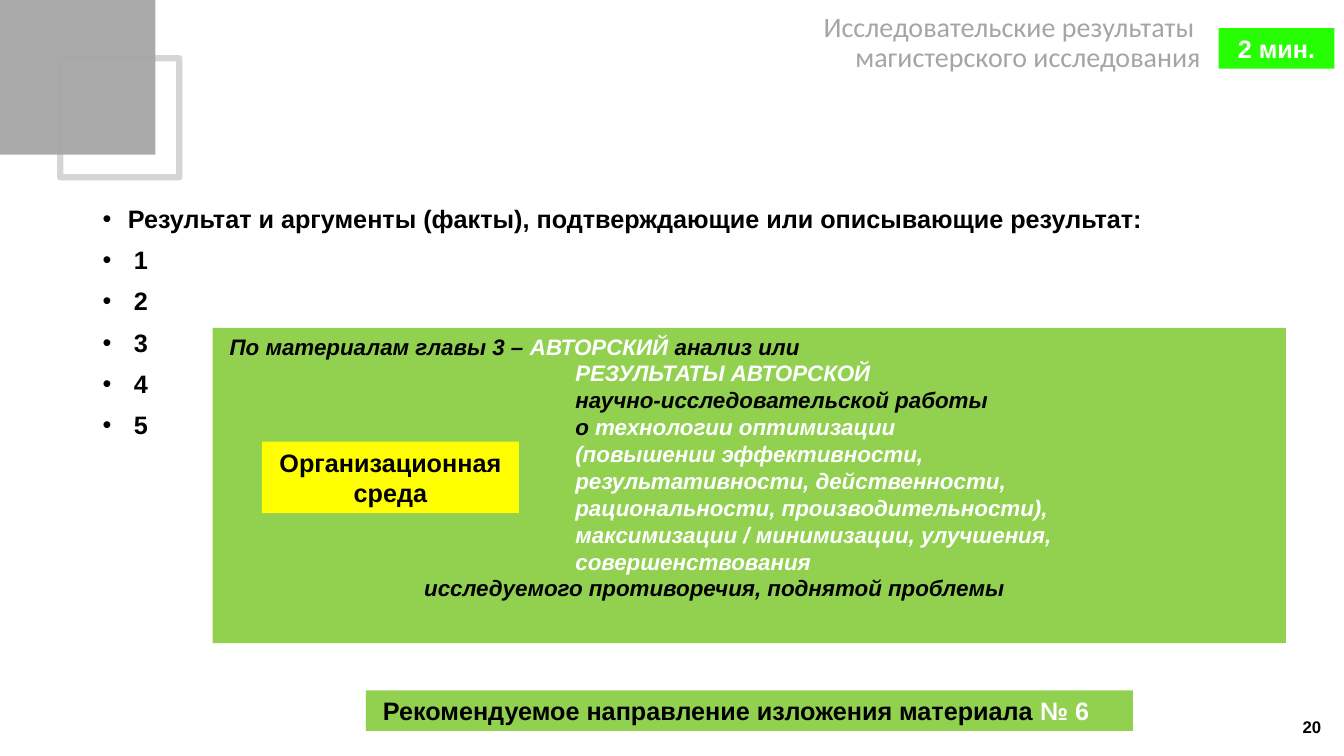
from dataclasses import dataclass, field

from lxml import etree
from pptx import Presentation
from pptx import util as u
from pptx.dml import color, fill
from pptx.enum import shapes, text
from pptx.oxml import ns
from pptx.shapes.base import BaseShape
from pptx.slide import Slide

BLACK, WHITE, GREEN = "000000", "FFFFFF", "92D050"
LEFT, CENTER, RIGHT = text.PP_ALIGN.LEFT, text.PP_ALIGN.CENTER, text.PP_ALIGN.RIGHT
TOP, MIDDLE = text.MSO_ANCHOR.TOP, text.MSO_ANCHOR.MIDDLE
STRONG = {"name": "Arial", "size": u.Pt(18), "bold": True}
ITALIC = {**STRONG, "size": u.Pt(16), "italic": True}
HEADING = {"name": "Calibri", "size": u.Pt(20), "bold": False}
NUMBER = {**STRONG, "size": u.Pt(12)}


@dataclass
class Run:
    words: str
    colour: str = BLACK


@dataclass
class Line:
    runs: list[Run]
    left: float = 0
    hanging: float = 0
    bullet: str = ""
    spacing: dict = field(default_factory=dict)


@dataclass
class Box:
    left: float
    top: float
    width: float
    height: float
    lines: list[Line] = field(default_factory=list)
    colour: str = ""
    align: text.PP_ALIGN = LEFT
    anchor: text.MSO_ANCHOR = MIDDLE
    font: dict = field(default_factory=lambda: STRONG)
    inset: bool = True


def set_all(target: object, values: dict) -> None:
    for name, value in values.items():
        setattr(target, name, value)


def paint(area: fill.FillFormat, colour: str, opacity: int = 100) -> None:
    area.solid()
    area.fore_color.rgb = color.RGBColor.from_string(colour)
    if opacity < 100:
        tint = area.fore_color._xFill.find(ns.qn("a:srgbClr"))
        etree.SubElement(tint, ns.qn("a:alpha"), val=str(opacity * 1000))


def place(shape: BaseShape, box: Box) -> None:
    set_all(shape, {
        "left": u.Cm(box.left), "top": u.Cm(box.top),
        "width": u.Cm(box.width), "height": u.Cm(box.height),
    })


def write(shape: BaseShape, box: Box) -> None:
    frame = shape.text_frame
    set_all(frame, {
        "word_wrap": True,
        "auto_size": text.MSO_AUTO_SIZE.NONE,
        "vertical_anchor": box.anchor,
    })
    if not box.inset:
        set_all(frame, dict.fromkeys(
            ("margin_left", "margin_top", "margin_right", "margin_bottom"), 0))
    for index, line in enumerate(box.lines):
        paragraph = frame.add_paragraph() if index else frame.paragraphs[0]
        set_all(paragraph, {"alignment": box.align, "space_before": u.Pt(0), **line.spacing})
        properties = paragraph._p.get_or_add_pPr()
        properties.set("marL", str(u.Cm(line.left)))
        properties.set("indent", str(-u.Cm(line.hanging)))
        if line.bullet:
            etree.SubElement(properties, ns.qn("a:buFont"), typeface="Arial")
            etree.SubElement(properties, ns.qn("a:buChar"), char=line.bullet)
        for part in line.runs:
            run = paragraph.add_run()
            run.text = part.words
            set_all(run.font, box.font)
            paint(run.font.fill, part.colour)


def add_block(slide: Slide, box: Box, opacity: int = 100) -> BaseShape:
    block = slide.shapes.add_shape(shapes.MSO_SHAPE.RECTANGLE, 0, 0, 0, 0)
    place(block, box)
    block.shadow.inherit = False
    block.line.fill.background()
    if box.colour:
        paint(block.fill, box.colour, opacity)
    else:
        block.fill.background()
    if box.lines:
        write(block, box)
    return block


def fill_placeholder(shape: BaseShape, box: Box) -> None:
    place(shape, box)
    write(shape, box)


def result_lines() -> list[Line]:
    tight = {"line_spacing": 0.9}
    heading = "Результат и аргументы (факты), подтверждающие или описывающие результат:"
    lines = [Line([Run(heading)], 0.64, 0.64, "•", tight)]
    for number in range(1, 6):
        lines.append(Line([Run(str(number))], 0.79, 0.79, "•",
                          {**tight, "space_before": u.Pt(10)}))
    return lines


def author_lines() -> list[Line]:
    column = [
        [Run("РЕЗУЛЬТАТЫ АВТОРСКОЙ", WHITE)],
        [Run("научно-исследовательской работы")],
        [Run("о "), Run("технологии оптимизации", WHITE)],
        [Run("(повышении эффективности,", WHITE)],
        [Run("результативности, действенности,", WHITE)],
        [Run("рациональности, производительности),", WHITE)],
        [Run("максимизации / минимизации, улучшения,", WHITE)],
        [Run("совершенствования", WHITE)],
    ]
    opening = [Run("По материалам главы 3 – "), Run("АВТОРСКИЙ", WHITE), Run(" анализ или")]
    closing = [Run("исследуемого противоречия, поднятой проблемы")]
    return [Line(opening, 0.18), *(Line(runs, 8.89) for runs in column), Line(closing, 5.08)]


def main() -> None:
    deck = Presentation()
    set_all(deck, {"slide_width": u.Cm(33.87), "slide_height": u.Cm(19.05)})
    slide = deck.slides.add_slide(deck.slide_layouts[1])

    corner_frame = add_block(slide, Box(1.52, 1.47, 3, 3))
    corner_frame.line.width = u.Pt(4.5)
    paint(corner_frame.line.fill, "AFABAB", 50)
    add_block(slide, Box(0, -0.02, 3.92, 3.92, colour="A6A6A6"), 95)

    fill_placeholder(slide.shapes.title, Box(
        3.18, 0.33, 27.08, 1.78,
        [Line([Run(words, "A5A5A5")], spacing={"line_spacing": 0.9})
         for words in ("Исследовательские результаты ", "магистерского исследования")],
        align=RIGHT, anchor=TOP, font=HEADING, inset=False))
    fill_placeholder(slide.placeholders[1], Box(
        2.33, 5.08, 29.21, 12.09, result_lines(), anchor=TOP))

    direction = [Run("Рекомендуемое направление изложения материала "), Run("№ 6", WHITE)]
    for box in (
        Box(5.36, 8.26, 27.05, 7.95, author_lines(), GREEN, anchor=TOP, font=ITALIC),
        Box(6.6, 11.13, 6.48, 1.8, [Line([Run("Организационная среда")])], "FFFF00", CENTER),
        Box(30.71, 0.71, 2.92, 1.02, [Line([Run("2 мин.", WHITE)])], "27FD03", CENTER),
        Box(9.22, 17.4, 19.33, 1.02, [Line(direction, 0.18)], GREEN),
    ):
        add_block(slide, box)

    page = Box(25.93, 17.81, 7.62, 1.02, [Line([Run("20")])], align=RIGHT, font=NUMBER)
    page_number = slide.shapes.add_textbox(0, 0, 0, 0)
    place(page_number, page)
    write(page_number, page)
    deck.save("out.pptx")


if __name__ == "__main__":
    main()
